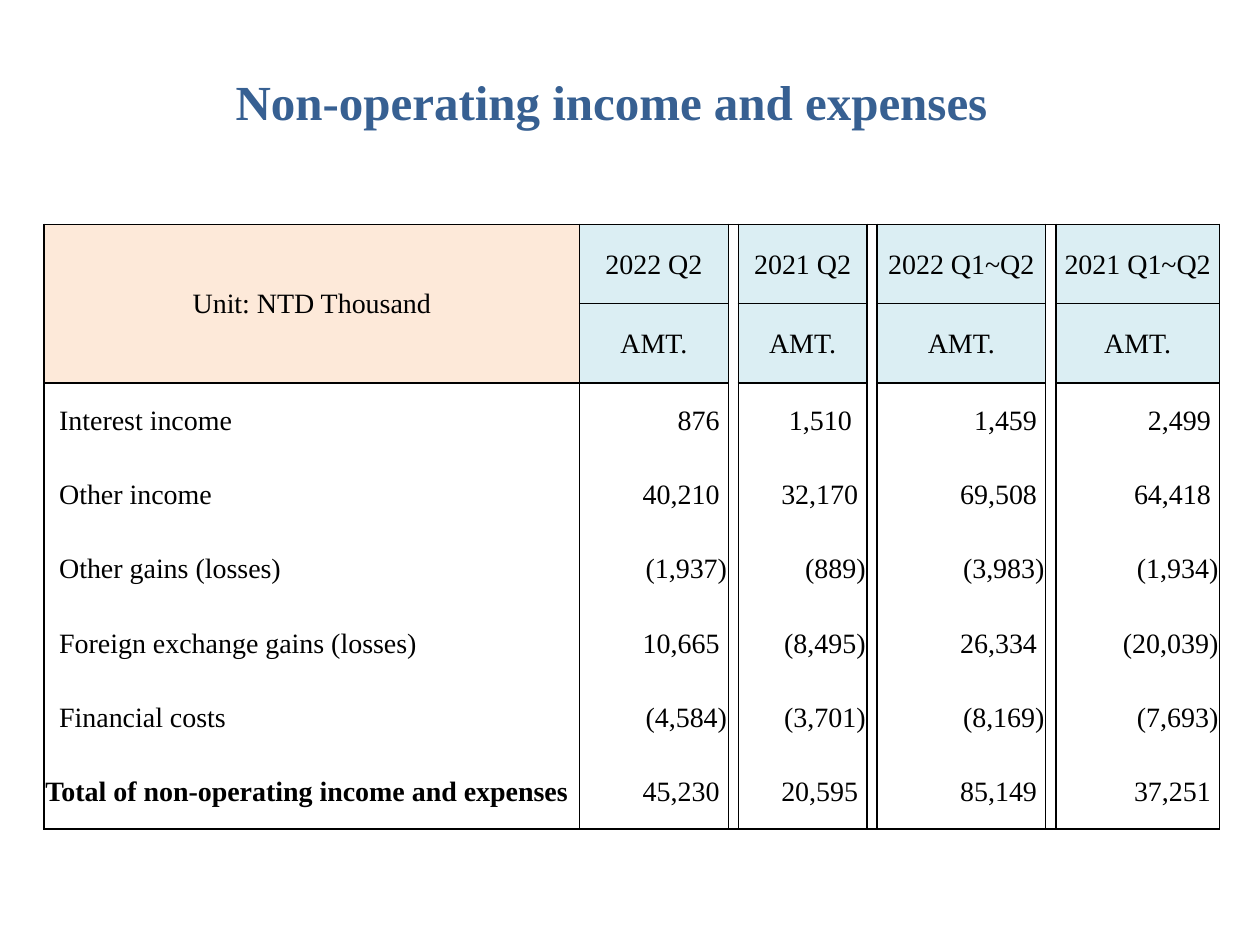
"""Build the slide with the table of non-operating income and expenses."""
from lxml import etree
from pptx import Presentation
from pptx.dml.color import RGBColor
from pptx.enum.text import MSO_ANCHOR, PP_ALIGN
from pptx.oxml.ns import qn
from pptx.util import Inches, Pt

LEFT, CENTER, RIGHT = PP_ALIGN.LEFT, PP_ALIGN.CENTER, PP_ALIGN.RIGHT
TOP, MIDDLE = MSO_ANCHOR.TOP, MSO_ANCHOR.MIDDLE
FONT = "Times New Roman"
COLS = [4.25, 1.18, 0.08, 1.02, 0.08, 1.34, 0.08, 1.3]
ROWS = [0.63] * 2 + [0.59] * 6
DATA = [
    ["Unit: NTD Thousand", "2022 Q2", "2021 Q2", "2022 Q1~Q2", "2021 Q1~Q2"],
    ["", "AMT.", "AMT.", "AMT.", "AMT."],
    ["Interest income", "876", "1,510", "1,459", "2,499"],
    ["Other income", "40,210", "32,170", "69,508", "64,418"],
    ["Other gains (losses)", "(1,937)", "(889)", "(3,983)", "(1,934)"],
    ["Foreign exchange gains (losses)", "10,665", "(8,495)", "26,334", "(20,039)"],
    ["Financial costs", "(4,584)", "(3,701)", "(8,169)", "(7,693)"],
    ["Total of non-operating income and expenses", "45,230", "20,595", "85,149", "37,251"],
]
LAST = len(DATA) - 1


def add_run(p, text, size, color, bold, align):
    p.alignment = align
    r = p.add_run()
    r.text = text
    r.font.name, r.font.size, r.font.bold = FONT, Pt(size), bold
    r.font.color.rgb = RGBColor.from_string(color)


def set_borders(cell, sides):
    tcPr = cell._tc.get_or_add_tcPr()
    for side in "LRTB":
        ln = etree.SubElement(tcPr, qn(f"a:ln{side}"), w=str(Pt(1)))
        if side in sides:
            fill = etree.SubElement(ln, qn("a:solidFill"))
            etree.SubElement(fill, qn("a:srgbClr"), val="000000")
        else:
            etree.SubElement(ln, qn("a:noFill"))


prs = Presentation()
prs.slide_width, prs.slide_height = Inches(10), Inches(7.5)
s = prs.slides.add_slide(prs.slide_layouts[5])

title = s.shapes.title
title.left, title.top = Inches(1.77), Inches(0.52)
title.width, title.height = Inches(8.11), Inches(0.96)
tf = title.text_frame
tf.word_wrap, tf.vertical_anchor = True, TOP
add_run(tf.paragraphs[0], "Non-operating income and expenses", 28, "376092", True, LEFT)

table = s.shapes.add_table(len(ROWS), len(COLS), Inches(0.35), Inches(1.78),
                           Inches(sum(COLS)), Inches(sum(ROWS))).table
table.first_row = table.horz_banding = False
for column, width in zip(table.columns, COLS):
    column.width = Inches(width)
for row, height in zip(table.rows, ROWS):
    row.height = Inches(height)

for i, values in enumerate(DATA):
    for j in range(len(COLS)):
        cell = table.cell(i, j)
        gap = j > 0 and j % 2 == 0
        header = i < 2 and not gap
        top = "T" if i == 0 or (i <= 2 and not gap) else ""
        bottom = "B" if i == LAST or header else ""
        set_borders(cell, "LR" + top + bottom)
        cell.margin_left = cell.margin_right = cell.margin_top = Inches(0.01)
        cell.margin_bottom = 0
        cell.vertical_anchor = MIDDLE
        if header:
            cell.fill.solid()
            cell.fill.fore_color.rgb = RGBColor.from_string("DBEEF3" if j else "FDE9D9")
        else:
            cell.fill.background()
        text = "" if gap else values[(j + 1) // 2]
        if not text:
            continue
        align = CENTER if header else RIGHT if j else LEFT
        if align == LEFT and i < LAST:
            cell.margin_left = Inches(0.12)
        if align == RIGHT and not text.endswith(")"):
            cell.margin_right = Inches(0.12 if text == "1,510" else 0.07)
        add_run(cell.text_frame.paragraphs[0], text, 16, "000000", i == LAST and j == 0, align)

table.cell(0, 0).merge(table.cell(1, 0))
prs.save("out.pptx")
